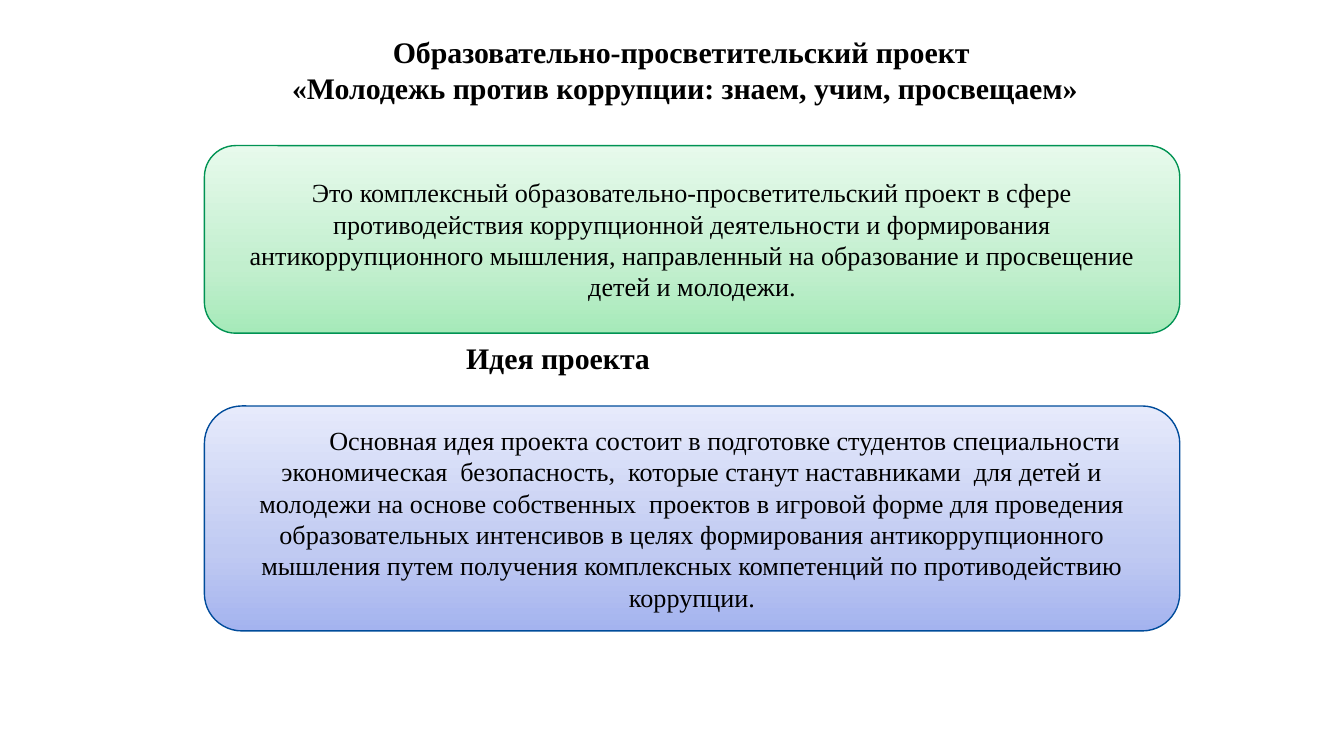
from copy import deepcopy
from dataclasses import dataclass

from pptx import Presentation
from pptx.dml.color import RGBColor
from pptx.enum import shapes, text
from pptx.oxml.ns import qn
from pptx.util import Pt

BLACK = RGBColor(0, 0, 0)
GREEN = RGBColor(0x00, 0x93, 0x53)
MINT = (RGBColor(0xA6, 0xEA, 0xB9), RGBColor(0xC2, 0xEF, 0xCE), RGBColor(0xE7, 0xFA, 0xEC))
BLUE = RGBColor(0x00, 0x4C, 0x9B)
SKY = (RGBColor(0xA4, 0xB3, 0xEF), RGBColor(0xC0, 0xCA, 0xF2), RGBColor(0xE6, 0xEA, 0xFB))
STOPS = (0, 0.35, 1)
FONT = "Times New Roman"
LEFT, WIDTH = 109.5, 522.5


@dataclass
class Panel:
    top: float
    height: float
    line: RGBColor
    shades: tuple[RGBColor, ...]
    words: str
    indent: float = 0


PANELS = [
    Panel(78, 100.5, GREEN, MINT,
          "Это комплексный образовательно-просветительский проект в сфере "
          "противодействия коррупционной деятельности и формирования "
          "антикоррупционного мышления, направленный на образование и "
          "просвещение детей и молодежи."),
    Panel(217.5, 120.5, BLUE, SKY,
          "Основная идея проекта состоит в подготовке студентов специальности "
          "экономическая  безопасность,  которые станут наставниками  для детей и "
          "молодежи на основе собственных  проектов в игровой форме для проведения "
          "образовательных интенсивов в целях формирования антикоррупционного "
          "мышления путем получения комплексных компетенций по противодействию "
          "коррупции.", indent=35.3),
]


def write(shape, words: str, *, size: float, bold: bool = False, indent: float = 0,
          anchor=text.MSO_ANCHOR.TOP) -> None:
    frame = shape.text_frame
    frame.text = words
    frame.word_wrap = True
    frame.auto_size = text.MSO_AUTO_SIZE.NONE
    frame.vertical_anchor = anchor
    for para in frame.paragraphs:
        para.alignment = text.PP_ALIGN.CENTER
        if indent:
            para._p.get_or_add_pPr().set("indent", str(Pt(indent)))
        font = para.font
        font.name, font.size, font.bold = FONT, Pt(size), bold
        font.color.rgb = BLACK


def shade(shape, shades: tuple[RGBColor, ...]) -> None:
    """Fill with a three-stop gradient that runs from bottom to top."""
    fill = shape.fill
    fill.gradient()
    fill.gradient_angle = 90
    stops = shape._element.spPr.find(qn("a:gradFill")).find(qn("a:gsLst"))
    stops.insert(1, deepcopy(stops[0]))
    for stop, place, color in zip(fill.gradient_stops, STOPS, shades):
        stop.position = place
        stop.color.rgb = color


def draw(slide, panel: Panel) -> None:
    shape = slide.shapes.add_shape(
        shapes.MSO_SHAPE.ROUNDED_RECTANGLE,
        Pt(LEFT), Pt(panel.top), Pt(WIDTH), Pt(panel.height))
    shape.shadow.inherit = False
    shade(shape, panel.shades)
    shape.line.color.rgb = panel.line
    shape.line.width = Pt(0.75)
    write(shape, panel.words, size=14, indent=panel.indent,
          anchor=text.MSO_ANCHOR.MIDDLE)


def main() -> None:
    deck = Presentation()
    deck.slide_width, deck.slide_height = Pt(720), Pt(405)
    slide = deck.slides.add_slide(deck.slide_layouts[5])

    title = slide.shapes.title
    title.left, title.top, title.width, title.height = Pt(50), Pt(14.4), Pt(634), Pt(46)
    write(title, "Образовательно-просветительский проект \n"
          "«Молодежь против коррупции: знаем, учим, просвещаем»", size=16, bold=True)

    for panel in PANELS:
        draw(slide, panel)

    label = slide.shapes.add_textbox(Pt(199), Pt(178.5), Pt(200), Pt(26.5))
    write(label, "Идея проекта", size=16, bold=True)
    deck.save("out.pptx")


if __name__ == "__main__":
    main()
